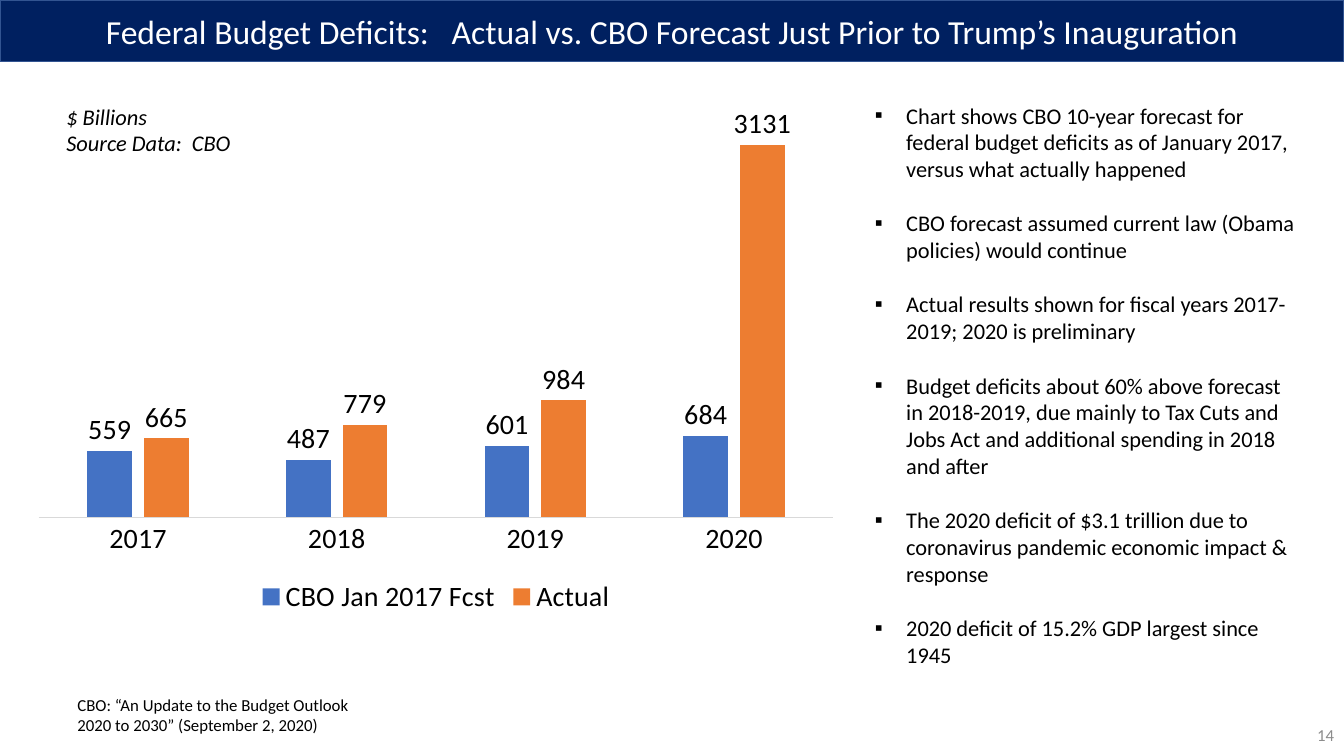
from lxml.etree import SubElement
from pptx import Presentation
from pptx.chart.data import CategoryChartData
from pptx.dml.color import RGBColor
from pptx.enum.chart import XL_CHART_TYPE as ChartType, XL_LABEL_POSITION as LabelPosition
from pptx.enum.chart import XL_LEGEND_POSITION as LegendPosition, XL_TICK_MARK as TickMark
from pptx.enum.text import MSO_ANCHOR as Anchor, MSO_AUTO_SIZE as AutoSize, PP_ALIGN as Align
from pptx.oxml.ns import qn
from pptx.util import Inches, Pt

TITLE = "Federal Budget Deficits:   Actual vs. CBO Forecast Just Prior to Trump’s Inauguration"
CHART_NOTE = ["$ Billions", "Source Data:  CBO"]
CITATION = ["CBO: “An Update to the Budget Outlook 2020 to 2030” (September 2, 2020)"]
PAGE_NUMBER = ["14"]
POINTS = [
    "Chart shows CBO 10-year forecast for federal budget deficits as of January 2017, "
    "versus what actually happened",
    "CBO forecast assumed current law (Obama policies) would continue",
    "Actual results shown for fiscal years 2017-2019; 2020 is preliminary",
    "Budget deficits about 60% above forecast in 2018-2019, due mainly to Tax Cuts and "
    "Jobs Act and additional spending in 2018 and after",
    "The 2020 deficit of $3.1 trillion due to coronavirus pandemic economic impact & response",
    "2020 deficit of 15.2% GDP largest since 1945",
]

NAVY = RGBColor(0x00, 0x20, 0x60)
NAVY_EDGE = RGBColor(0x32, 0x54, 0x91)
BLUE = RGBColor(0x44, 0x72, 0xC4)
ORANGE = RGBColor(0xED, 0x7D, 0x31)
AXIS_GREY = RGBColor(0xD9, 0xD9, 0xD9)
NUMBER_GREY = RGBColor(0x8C, 0x8C, 0x8C)
BLACK = RGBColor(0, 0, 0)
WHITE = RGBColor(255, 255, 255)

YEARS = ["2017", "2018", "2019", "2020"]
DEFICITS = [
    ("CBO Jan 2017 Fcst", [559, 487, 601, 684], BLUE),
    ("Actual", [665, 779, 984, 3131], ORANGE),
]

FONT = "Calibri"
WIDTH, HEIGHT = 13.33, 7.5
TITLE_BOX = (0, 0, WIDTH, 0.61)
CHART_BOX = (0.22, 0.9, 8.21, 5.25)
POINTS_BOX = (8.58, 0.96, 4.37, 5.76)
NOTE_BOX = (0.56, 0.97, 1.85, 0.64)
CITATION_BOX = (0.67, 6.84, 3.23, 0.5)
NUMBER_BOX = (WIDTH - 3, 7.09, 3, 0.4)
INDENT = Inches(0.31)


def style_font(font, size, color=BLACK, italic=False):
    font.name, font.size, font.italic = FONT, Pt(size), italic
    font.color.rgb = color


def write_text(frame, lines, size, color=BLACK, italic=False, align=Align.LEFT,
               anchor=Anchor.TOP, wrap=True, bullet=None, gap=0):
    frame.word_wrap, frame.auto_size = wrap, AutoSize.NONE
    frame.vertical_anchor = anchor
    for index, line in enumerate(lines):
        paragraph = frame.add_paragraph() if index else frame.paragraphs[0]
        paragraph.alignment = align
        paragraph.space_before = Pt(gap if index else 0)
        run = paragraph.add_run()
        run.text = line
        style_font(run.font, size, color, italic)
        if bullet:
            properties = paragraph._p.get_or_add_pPr()
            properties.set("marL", str(INDENT))
            properties.set("indent", str(-INDENT))
            SubElement(properties, qn("a:buFont"), typeface="Wingdings 2" if bullet == "" else "Arial")
            SubElement(properties, qn("a:buChar"), char=bullet)


def add_text(slide, box, lines, size, **text_format):
    shape = slide.shapes.add_textbox(*map(Inches, box))
    write_text(shape.text_frame, lines, size, **text_format)


def add_title(slide):
    title = slide.shapes.title
    title.left, title.top, title.width, title.height = map(Inches, TITLE_BOX)
    title.fill.solid()
    title.fill.fore_color.rgb = NAVY
    title.line.color.rgb = NAVY_EDGE
    title.line.width = Pt(1)
    write_text(title.text_frame, [TITLE], 24, color=WHITE, align=Align.CENTER,
               anchor=Anchor.MIDDLE)


def add_deficit_chart(slide):
    data = CategoryChartData(number_format="0")
    data.categories = YEARS
    for name, values, _ in DEFICITS:
        data.add_series(name, values)
    frame = slide.shapes.add_chart(ChartType.COLUMN_CLUSTERED, *map(Inches, CHART_BOX), data)
    chart = frame.chart
    style_font(chart.font, 20)
    chart.has_title = False
    chart.has_legend = True
    chart.legend.position = LegendPosition.BOTTOM
    chart.legend.include_in_layout = False
    style_font(chart.legend.font, 20)

    years = chart.category_axis
    years.major_tick_mark = years.minor_tick_mark = TickMark.NONE
    years.format.line.color.rgb = AXIS_GREY
    years.format.line.width = Pt(0.75)
    style_font(years.tick_labels.font, 20)
    amounts = chart.value_axis
    amounts.visible = amounts.has_major_gridlines = False
    amounts.minimum_scale, amounts.maximum_scale = 0, 3500

    plot = chart.plots[0]
    plot.gap_width, plot.overlap, plot.vary_by_categories = 219, -27, False
    for series, (_, _, color) in zip(plot.series, DEFICITS):
        series.format.fill.solid()
        series.format.fill.fore_color.rgb = color
        labels = series.data_labels
        labels.show_value = True
        labels.position = LabelPosition.OUTSIDE_END
        style_font(labels.font, 20)


def main():
    presentation = Presentation()
    presentation.slide_width, presentation.slide_height = Inches(WIDTH), Inches(HEIGHT)
    slide = presentation.slides.add_slide(presentation.slide_layouts[5])
    add_title(slide)
    add_text(slide, NUMBER_BOX, PAGE_NUMBER, 12, color=NUMBER_GREY, align=Align.RIGHT,
             anchor=Anchor.MIDDLE)
    add_deficit_chart(slide)
    add_text(slide, POINTS_BOX, POINTS, 16, bullet="▪", gap=19.5)
    add_text(slide, NOTE_BOX, CHART_NOTE, 16, italic=True, wrap=False)
    add_text(slide, CITATION_BOX, CITATION, 12)
    presentation.save("out.pptx")


if __name__ == "__main__":
    main()
